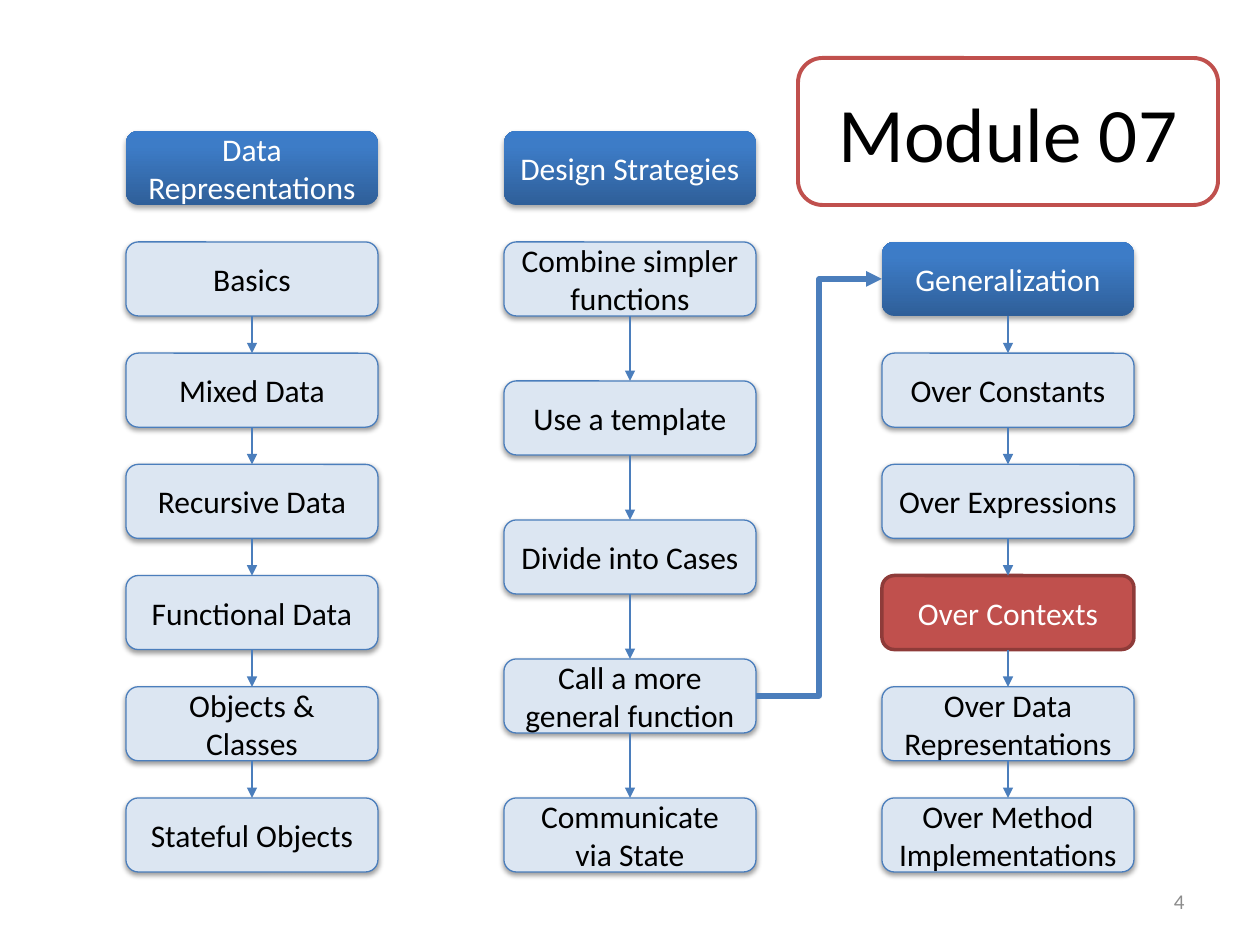
from itertools import pairwise

from lxml.etree import SubElement
from pptx import Presentation
from pptx.dml.color import RGBColor
from pptx.enum.shapes import MSO_CONNECTOR as Link, MSO_SHAPE as Preset
from pptx.enum.text import MSO_ANCHOR as Anchor, PP_ALIGN as Align
from pptx.oxml.ns import qn
from pptx.util import Emu, Pt

PX = 914400 / 126
TOP, LEFT, BOTTOM, RIGHT = range(4)
BOX_W, BOX_H = 252, 74
COLORS = {
    "topic": "DCE6F2",
    "edge": "4B7EBC",
    "current": "C0504D",
    "current_edge": "8E3B39",
    "dark": "2F5F99",
    "mid": "3D7CC7",
    "light": "3A7CCB",
    "black": "000000",
    "white": "FFFFFF",
    "number": "8C8C8C",
}
DATA_TOPICS = ["Basics", "Mixed Data", "Recursive Data", "Functional Data",
               "Objects & Classes", "Stateful Objects"]
STRATEGIES = ["Combine simpler functions", "Use a template", "Divide into Cases",
              "Call a more general function", "Communicate via State"]
GENERALIZATIONS = ["Generalization", "Over Constants", "Over Expressions", "Over Contexts",
                   "Over Data Representations", "Over Method Implementations"]


def px(length):
    return Emu(round(length * PX))


def rgb(name):
    return RGBColor.from_string(COLORS[name])


def write(frame, text, size, color, align=Align.CENTER):
    frame.word_wrap = True
    frame.vertical_anchor = Anchor.MIDDLE
    paragraph = frame.paragraphs[0]
    paragraph.alignment = align
    run = paragraph.add_run()
    run.text = text
    run.font.name = "Calibri"
    run.font.size = Pt(size)
    run.font.color.rgb = rgb(color)


def set_line(line, color, width):
    line.color.rgb = rgb(color)
    line.width = Pt(width)


def add_color(parent, color, alpha=None):
    node = SubElement(parent, qn("a:srgbClr"), val=COLORS[color])
    if alpha:
        SubElement(node, qn("a:alpha"), val=str(alpha * 1000))


def add_shadow(box, distance, alpha):
    effects = box.element.spPr.find(qn("a:effectLst"))
    shadow = SubElement(effects, qn("a:outerShdw"), blurRad=str(Pt(3.1)),
                        dist=str(Pt(distance)), dir="5400000", rotWithShape="0")
    add_color(shadow, "black", alpha)


def fill_gradient(box):
    properties = box.element.spPr
    gradient = SubElement(properties, qn("a:gradFill"), rotWithShape="1")
    stops = SubElement(gradient, qn("a:gsLst"))
    for position, color in ((0, "dark"), (80, "mid"), (100, "light")):
        add_color(SubElement(stops, qn("a:gs"), pos=str(position * 1000)), color)
    SubElement(gradient, qn("a:lin"), ang="16200000", scaled="0")
    properties.find(qn("a:prstGeom")).addnext(gradient)


def add_box(slide, left, top, width, height, text, size, color):
    box = slide.shapes.add_shape(Preset.ROUNDED_RECTANGLE,
                                 px(left), px(top), px(width), px(height))
    box.shadow.inherit = False
    write(box.text_frame, text, size, color)
    return box


def add_header(slide, left, top, text):
    header = add_box(slide, left, top, BOX_W, BOX_H, text, 18, "white")
    fill_gradient(header)
    header.line.fill.background()
    add_shadow(header, 1.8, 35)
    return header


def add_topic(slide, left, top, text):
    topic = add_box(slide, left, top, BOX_W, BOX_H, text, 18, "black")
    topic.fill.solid()
    topic.fill.fore_color.rgb = rgb("topic")
    set_line(topic.line, "edge", 0.75)
    add_shadow(topic, 1.6, 38)
    return topic


def add_current(slide, left, top, text):
    current = add_box(slide, left, top, BOX_W, BOX_H, text, 18, "white")
    current.fill.solid()
    current.fill.fore_color.rgb = rgb("current")
    set_line(current.line, "current_edge", 2)
    return current


def add_arrow(slide, source, source_side, target, target_side, kind=Link.STRAIGHT, width=0.75):
    arrow = slide.shapes.add_connector(kind, 0, 0, 0, 0)
    arrow.begin_connect(source, source_side)
    arrow.end_connect(target, target_side)
    set_line(arrow.line, "edge", width)
    properties = arrow.element.spPr
    SubElement(properties.find(qn("a:ln")), qn("a:tailEnd"), type="triangle")
    SubElement(properties, qn("a:effectLst"))


def add_column(slide, left, top, height, topics, makers):
    step = (height - BOX_H) / (len(topics) - 1)
    boxes = [makers.get(text, add_topic)(slide, left, top + row * step, text)
             for row, text in enumerate(topics)]
    for upper, lower in pairwise(boxes):
        add_arrow(slide, upper, BOTTOM, lower, TOP)
    return dict(zip(topics, boxes))


def add_module_title(slide, left, top, width, height):
    title = add_box(slide, left, top, width, height, "Module 07", 44, "black")
    title.fill.background()
    set_line(title.line, "current", 2.25)


def add_page_number(slide, left, top, width, height):
    number = slide.shapes.add_textbox(px(left), px(top), px(width), px(height))
    write(number.text_frame, "4", 12, "number", Align.RIGHT)


def main():
    deck = Presentation()
    deck.slide_width, deck.slide_height = px(1260), px(945)
    slide = deck.slides.add_slide(deck.slide_layouts[6])
    makers = {"Generalization": add_header, "Over Contexts": add_current}

    add_header(slide, 126, 131, "Data Representations")
    add_header(slide, 504, 131, "Design Strategies")
    columns = [add_column(slide, 126 + 378 * index, 242, 630, topics, makers)
               for index, topics in enumerate((DATA_TOPICS, STRATEGIES, GENERALIZATIONS))]
    add_module_title(slide, 798, 58, 420, 147)
    add_arrow(slide, columns[1]["Call a more general function"], RIGHT,
              columns[2]["Generalization"], LEFT, Link.ELBOW, 3)
    add_page_number(slide, 903, 876, 294, 50)
    deck.save("out.pptx")


if __name__ == "__main__":
    main()
